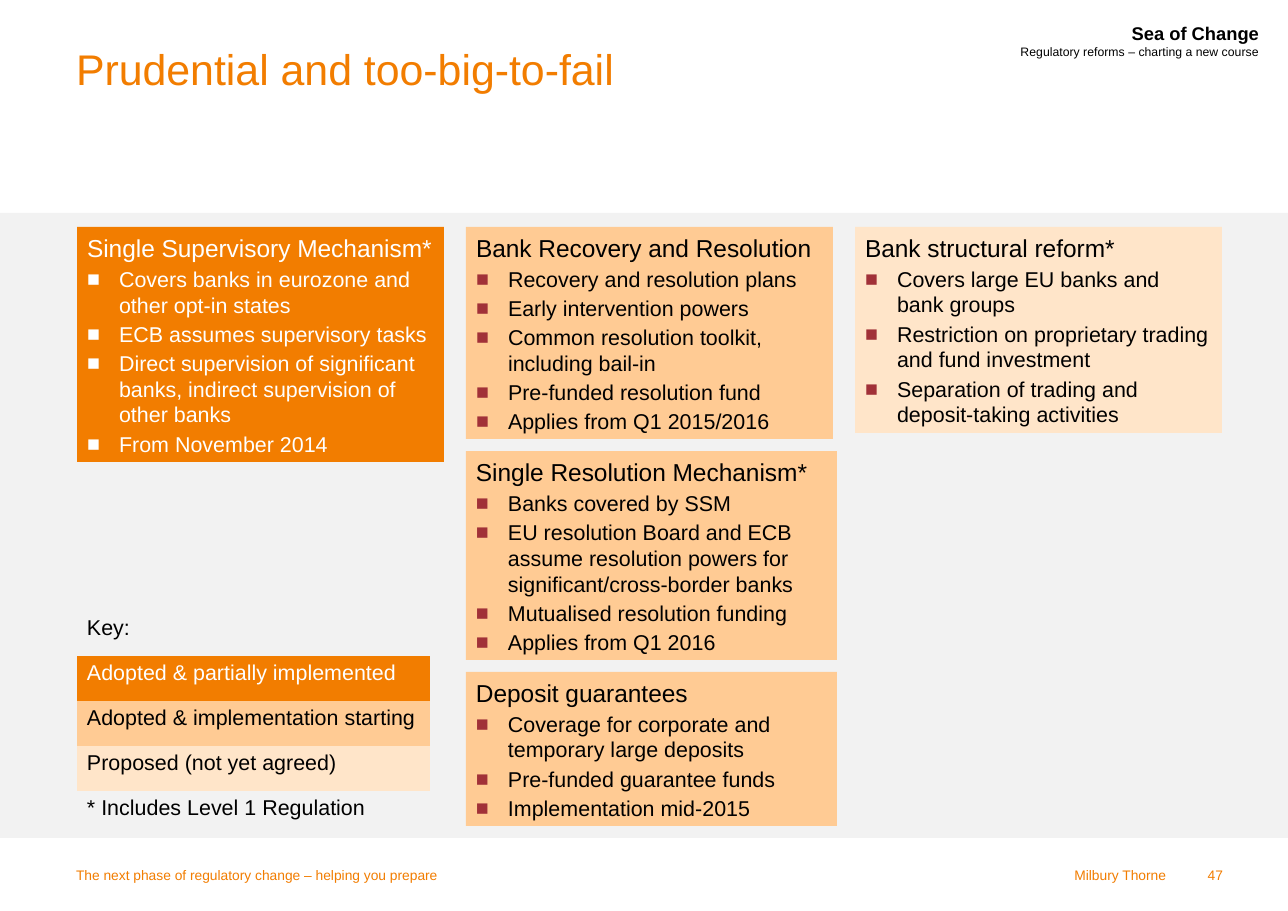
from lxml.etree import SubElement
from pptx import Presentation
from pptx.dml.color import RGBColor
from pptx.enum.shapes import MSO_SHAPE
from pptx.enum.text import MSO_ANCHOR, MSO_AUTO_SIZE, PP_ALIGN
from pptx.oxml.ns import qn
from pptx.util import Pt

EMU_PER_PX = 8298
SLIDE_SIZE = (1288, 911)
FONT = "Arial"
ORANGE, PEACH, CREAM = "F27D00", "FFCB94", "FFE5C9"
BLACK, WHITE, GREY, RED = "000000", "FFFFFF", "F2F2F2", "A13138"
NO_GRID_STYLE = "{2D5ABB26-0587-4C30-8999-92F81FD0307C}"

TITLE = "Prudential and too-big-to-fail"
HEADER = [("Sea of Change", 12, True),
          ("Regulatory reforms – charting a new course", 8, False)]
FOOTERS = [
    ("The next phase of regulatory change – helping you prepare", 63, 828, PP_ALIGN.LEFT),
    ("Milbury Thorne", 890, 289, PP_ALIGN.RIGHT),
    ("47", 1179, 57, PP_ALIGN.RIGHT),
]
COLUMN_LEFT, COLUMN_STEP = 77, 389
CARDS = [
    (0, 227, 367, 235, ORANGE, WHITE, WHITE, "Single Supervisory Mechanism*", [
        "Covers banks in eurozone and other opt-in states",
        "ECB assumes supervisory tasks",
        "Direct supervision of significant banks, indirect supervision of other banks",
        "From November 2014"]),
    (1, 227, 367, 212, PEACH, BLACK, RED, "Bank Recovery and Resolution", [
        "Recovery and resolution plans",
        "Early intervention powers",
        "Common resolution toolkit, including bail-in",
        "Pre-funded resolution fund",
        "Applies from Q1 2015/2016"]),
    (1, 451, 371, 209, PEACH, BLACK, RED, "Single Resolution Mechanism*", [
        "Banks covered by SSM",
        "EU resolution Board and ECB assume resolution powers for significant/cross-border banks",
        "Mutualised resolution funding",
        "Applies from Q1 2016"]),
    (1, 672, 371, 154, PEACH, BLACK, RED, "Deposit guarantees", [
        "Coverage for corporate and temporary large deposits",
        "Pre-funded guarantee funds",
        "Implementation mid-2015"]),
    (2, 227, 367, 206, CREAM, BLACK, RED, "Bank structural reform*", [
        "Covers large EU banks and bank groups",
        "Restriction on proprietary trading and fund investment",
        "Separation of trading and deposit-taking activities"]),
]
KEY_ROWS = [
    ("Key:", None, BLACK),
    ("Adopted & partially implemented", ORANGE, WHITE),
    ("Adopted & implementation starting", PEACH, BLACK),
    ("Proposed (not yet agreed)", CREAM, BLACK),
    ("* Includes Level 1 Regulation", None, BLACK),
]
KEY_TOP, KEY_WIDTH, KEY_ROW_HEIGHT = 611, 353, 45


def px(*lengths):
    return [length * EMU_PER_PX for length in lengths]


def color(value):
    return RGBColor.from_string(value)


def style_font(font, size, value, bold=False):
    font.name, font.size, font.bold = FONT, Pt(size), bold
    font.color.rgb = color(value)


def set_margins(target, horizontal, vertical):
    target.margin_left = target.margin_right = horizontal * EMU_PER_PX
    target.margin_top = target.margin_bottom = vertical * EMU_PER_PX


def add_rectangle(slide, box, fill):
    shape = slide.shapes.add_shape(MSO_SHAPE.RECTANGLE, *px(*box))
    shape.shadow.inherit = False
    shape.fill.solid()
    shape.fill.fore_color.rgb = color(fill)
    shape.line.fill.background()
    return shape


def add_bullet(paragraph, value):
    properties = paragraph._p.get_or_add_pPr()
    indent = 32 * EMU_PER_PX
    properties.set("marL", str(indent))
    properties.set("indent", str(-indent))
    bullet_color = SubElement(properties, qn("a:buClr"))
    SubElement(bullet_color, qn("a:srgbClr"), val=value)
    SubElement(properties, qn("a:buFont"), typeface=FONT)
    SubElement(properties, qn("a:buChar"), char="■")


def add_title(slide):
    title = slide.shapes.title
    title.left, title.top, title.width, title.height = px(63, 36, 1162, 152)
    frame = title.text_frame
    frame.text = TITLE
    frame.vertical_anchor = MSO_ANCHOR.TOP
    set_margins(frame, 13, 7)
    frame.paragraphs[0].alignment = PP_ALIGN.LEFT
    style_font(frame.paragraphs[0].font, 28, ORANGE)


def add_header(slide):
    frame = slide.shapes.add_textbox(*px(990, 17, 280, 48)).text_frame
    frame.word_wrap = True
    paragraph = frame.paragraphs[0]
    paragraph.alignment = PP_ALIGN.RIGHT
    for index, (text, size, bold) in enumerate(HEADER):
        if index:
            paragraph.add_line_break()
        run = paragraph.add_run()
        run.text = text
        style_font(run.font, size, BLACK, bold)


def add_footer(slide, text, left, width, alignment):
    frame = slide.shapes.add_textbox(*px(left, 855, width, 39)).text_frame
    frame.word_wrap = True
    frame.vertical_anchor = MSO_ANCHOR.MIDDLE
    set_margins(frame, 13, 7)
    frame.text = text
    frame.paragraphs[0].alignment = alignment
    style_font(frame.paragraphs[0].font, 9, ORANGE)


def add_card(slide, column, top, width, height, fill, ink, bullet, heading, points):
    left = COLUMN_LEFT + column * COLUMN_STEP
    frame = add_rectangle(slide, (left, top, width, height), fill).text_frame
    frame.word_wrap = True
    frame.auto_size = MSO_AUTO_SIZE.SHAPE_TO_FIT_TEXT
    frame.vertical_anchor = MSO_ANCHOR.TOP
    set_margins(frame, 10, 6)
    frame.text = "\n".join([heading, *points])
    for index, paragraph in enumerate(frame.paragraphs):
        paragraph.alignment = PP_ALIGN.LEFT
        style_font(paragraph.font, 14 if index else 16, ink)
        if index:
            paragraph.level = 3
            paragraph.space_before = Pt(2.3)
            add_bullet(paragraph, bullet)


def add_key(slide):
    box = px(COLUMN_LEFT, KEY_TOP, KEY_WIDTH, KEY_ROW_HEIGHT * len(KEY_ROWS))
    graphic_frame = slide.shapes.add_table(len(KEY_ROWS), 1, *box)
    table = graphic_frame.table
    table.first_row = table.horz_banding = False
    for style in graphic_frame._element.iter(qn("a:tableStyleId")):
        style.text = NO_GRID_STYLE
    for index, (text, fill, ink) in enumerate(KEY_ROWS):
        cell = table.cell(index, 0)
        cell.text = text
        set_margins(cell, 10, 5)
        style_font(cell.text_frame.paragraphs[0].font, 14, ink)
        if fill:
            cell.fill.solid()
            cell.fill.fore_color.rgb = color(fill)
        else:
            cell.fill.background()


def main():
    presentation = Presentation()
    presentation.slide_width, presentation.slide_height = px(*SLIDE_SIZE)
    slide = presentation.slides.add_slide(presentation.slide_layouts[5])
    add_rectangle(slide, (0, 213, SLIDE_SIZE[0], 625), GREY)
    add_title(slide)
    add_header(slide)
    for footer in FOOTERS:
        add_footer(slide, *footer)
    for card in CARDS:
        add_card(slide, *card)
    add_key(slide)
    presentation.save("out.pptx")


if __name__ == "__main__":
    main()
